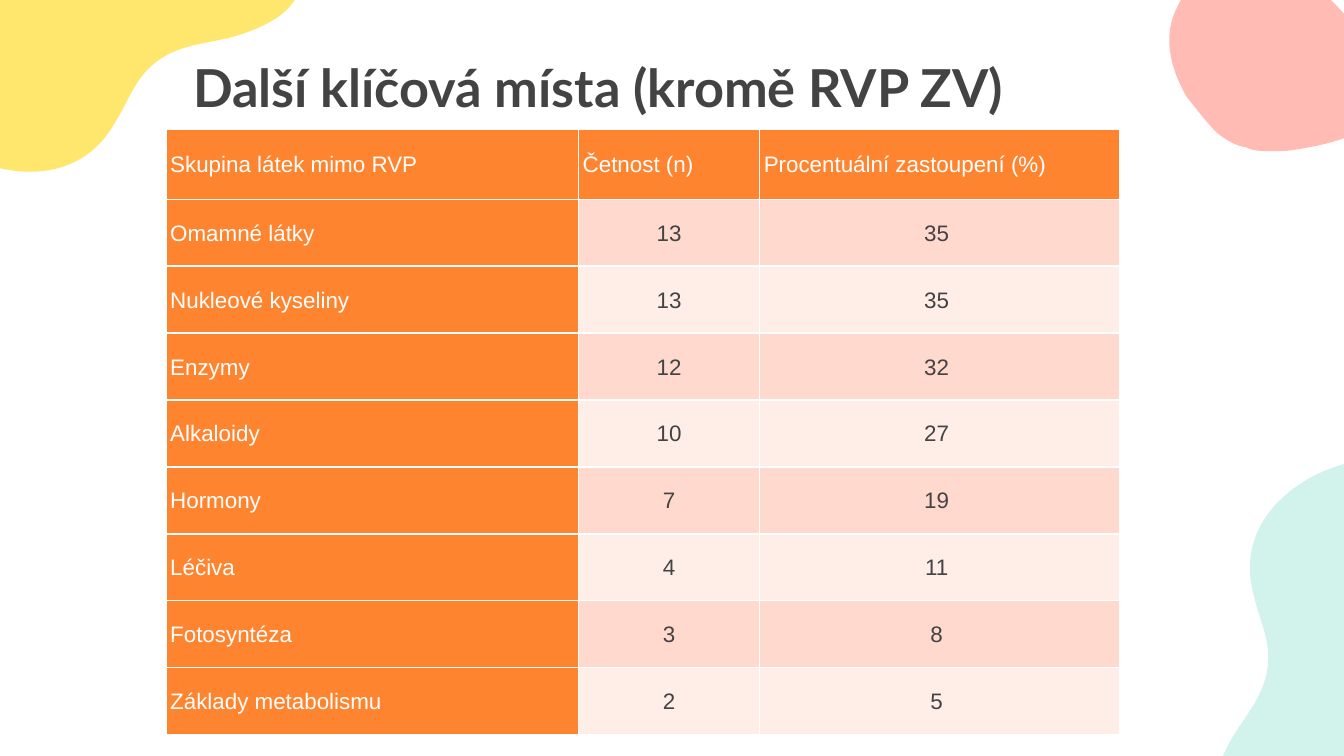
"""Build the slide with the table of key substance groups outside the RVP."""
from lxml import etree
from pptx import Presentation
from pptx.dml.color import RGBColor
from pptx.enum import text
from pptx.oxml import ns
from pptx.util import Pt

WHITE = RGBColor(0xFF, 0xFF, 0xFF)
GREY = RGBColor(0x43, 0x43, 0x43)
ORANGE = RGBColor(0xFF, 0x84, 0x2F)
BANDS = RGBColor(0xFF, 0xED, 0xE8), RGBColor(0xFF, 0xD9, 0xCD)
YELLOW = RGBColor(0xFF, 0xE7, 0x6E)
MINT = RGBColor(0xD2, 0xF2, 0xEC)
PINK = RGBColor(0xFF, 0xBB, 0xB4)

TITLE = "Další klíčová místa (kromě RVP ZV)"
HEADER = "Skupina látek mimo RVP", "Četnost (n)", "Procentuální zastoupení (%)"
GROUPS = [
    ("Omamné látky", 13, 35),
    ("Nukleové kyseliny", 13, 35),
    ("Enzymy", 12, 32),
    ("Alkaloidy", 10, 27),
    ("Hormony", 7, 19),
    ("Léčiva", 4, 11),
    ("Fotosyntéza", 3, 8),
    ("Základy metabolismu", 2, 5),
]
HARD_SPACE = chr(160)
COLUMN_WIDTHS = 221, 97, 193
HEADER_HEIGHT, ROW_HEIGHT = 37.5, 35.85
BORDERS = "lnL", "lnR", "lnT", "lnB"

WAVE = (150, 0), [
    (189, 0, 232, 34, 222, 75), (207, 105),
    (187, 132, 215, 168, 178, 187), (166, 193, 152, 195, 136, 195),
    (99, 195, 55, 181, 34, 161), (19, 147, 0, 123, 5, 101),
    (8, 85, 24, 78, 39, 73), (56, 68, 73, 69, 87, 55),
    (95, 47, 98, 37, 105, 26), (115, 8, 132, 0, 150, 0)]
PEBBLE = (63, 0), [
    (59, 0, 55, 0, 50, 1), (31, 4, 3, 10, 1, 33),
    (0, 46, 11, 59, 19, 67), (29, 79, 39, 89, 52, 96),
    (59, 100, 65, 101, 73, 101), (81, 101, 90, 99, 98, 95),
    (107, 91, 114, 80, 117, 70), (121, 56, 116, 41, 109, 29),
    (104, 23, 99, 16, 93, 10), (88, 6, 83, 3, 77, 2),
    (73, 0, 68, 0, 63, 0)]
BLOBS = [
    (WAVE, YELLOW, -65.7, -103, 180),
    (WAVE, MINT, 614, 264, 315),
    (PEBBLE, PINK, 623.8, -20, 180),
]


def add_blob(page, outline, color, left, top, angle):
    """Draw one curved background blob."""
    start, segments = outline
    points = [(Pt(x), Pt(y)) for segment in segments
              for x, y in zip(segment[::2], segment[1::2])]
    builder = page.shapes.build_freeform(Pt(start[0]), Pt(start[1]))
    builder.add_line_segments(points, close=True)
    blob = builder.convert_to_shape()
    lines = iter(list(blob._element.iter(ns.qn("a:lnTo"))))
    for segment in segments:
        first = next(lines)
        if len(segment) == 6:
            first.tag = ns.qn("a:cubicBezTo")
            for line in (next(lines), next(lines)):
                first.append(line[0])
                line.getparent().remove(line)
    blob.left, blob.top, blob.rotation = Pt(left), Pt(top), angle
    blob.shadow.inherit = False
    blob.fill.solid()
    blob.fill.fore_color.rgb = color
    blob.line.fill.background()


def set_margins(box, size):
    """Set the same inner margin on all four sides."""
    box.margin_left = box.margin_right = Pt(size)
    box.margin_top = box.margin_bottom = Pt(size)


def style_text(para, name, size, color, bold=False):
    """Format every run of a paragraph."""
    for span in para.runs:
        span.font.name = name
        span.font.size = Pt(size)
        span.font.color.rgb = color
        span.font.bold = bold


def add_title(page):
    """Add the centred heading."""
    box = page.shapes.add_textbox(Pt(-11), Pt(7.5), Pt(663), Pt(78))
    frame = box.text_frame
    frame.word_wrap = True
    frame.vertical_anchor = text.MSO_ANCHOR.MIDDLE
    set_margins(frame, 7.2)
    frame.text = TITLE
    frame.paragraphs[0].alignment = text.PP_ALIGN.CENTER
    style_text(frame.paragraphs[0], "Lato", 28, GREY, True)


def fill_cell(cell, value, row, column):
    """Write and style one table cell."""
    colored = row == 0 or column == 0
    properties = cell._tc.get_or_add_tcPr()
    for border in BORDERS:
        line = etree.SubElement(properties, ns.qn(f"a:{border}"), w=str(Pt(1)))
        solid = etree.SubElement(line, ns.qn("a:solidFill"))
        etree.SubElement(solid, ns.qn("a:srgbClr"), val=str(WHITE))
    cell.fill.solid()
    cell.fill.fore_color.rgb = ORANGE if colored else BANDS[row % 2]
    cell.vertical_anchor = text.MSO_ANCHOR.MIDDLE
    set_margins(cell, 2.2)
    cell.text_frame.text = str(value)
    para = cell.text_frame.paragraphs[0]
    para.alignment = text.PP_ALIGN.LEFT if colored else text.PP_ALIGN.CENTER
    para.line_spacing = 1.06
    para.space_after = Pt(8)
    style_text(para, "Arial", 12, WHITE if colored else GREY)


def add_groups_table(page):
    """Add the table of substance groups."""
    rows = [HEADER] + [(name, count, f"{share}{HARD_SPACE}")
                       for name, count, share in GROUPS]
    heights = [HEADER_HEIGHT] + [ROW_HEIGHT] * len(GROUPS)
    table = page.shapes.add_table(
        len(rows), len(COLUMN_WIDTHS), Pt(89), Pt(69.3),
        Pt(sum(COLUMN_WIDTHS)), Pt(sum(heights))).table
    for column, width in zip(table.columns, COLUMN_WIDTHS):
        column.width = Pt(width)
    for r, (values, height) in enumerate(zip(rows, heights)):
        table.rows[r].height = Pt(height)
        for c, value in enumerate(values):
            fill_cell(table.cell(r, c), value, r, c)


def main():
    """Assemble and save the deck."""
    deck = Presentation()
    deck.slide_width, deck.slide_height = Pt(720), Pt(405)
    page = deck.slides.add_slide(deck.slide_layouts[6])
    for blob in BLOBS:
        add_blob(page, *blob)
    add_title(page)
    add_groups_table(page)
    deck.save("out.pptx")


if __name__ == "__main__":
    main()
